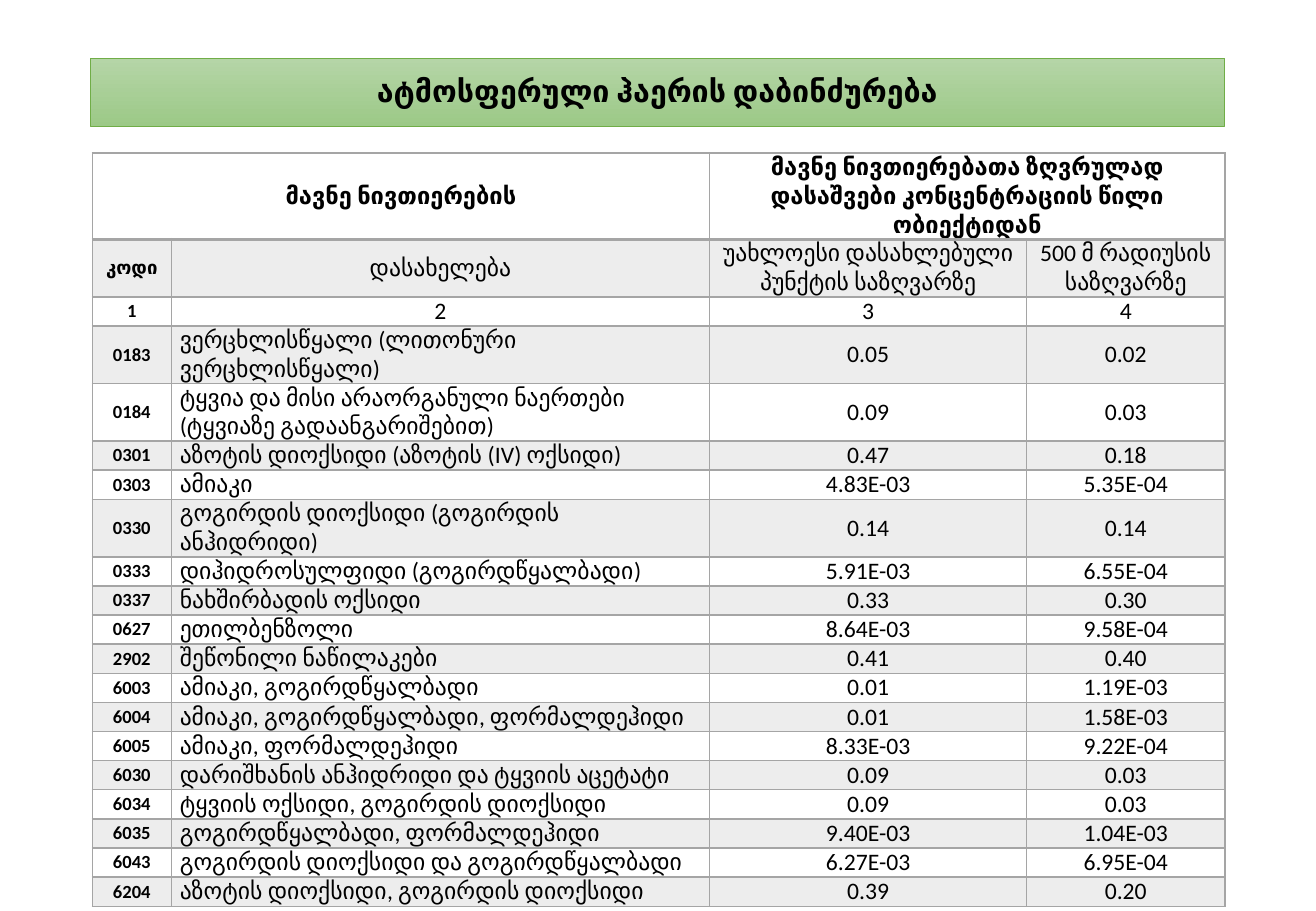
from lxml import etree
from pptx import Presentation
from pptx.dml.color import RGBColor
from pptx.enum.text import MSO_ANCHOR, PP_ALIGN
from pptx.oxml.ns import qn
from pptx.util import Inches, Pt

MIDDLE = MSO_ANCHOR.MIDDLE
CENTER, LEFT = PP_ALIGN.CENTER, PP_ALIGN.LEFT
TITLE_ONLY = 5

COLORS = {
    "text": "000000",
    "title_top": "B5D5A7",
    "title_bottom": "9CC987",
    "title_line": "70AD47",
    "grid": "A5A5A5",
    "band": "EDEDED",
    "plain": "FFFFFF",
}

COLUMN_WIDTHS = [0.65, 4.43, 2.61, 1.63]
HEADER_HEIGHT, DOUBLE_HEIGHT, SINGLE_HEIGHT = 0.7, 0.47, 0.24
DOUBLE_ROWS = {1, 3, 4, 7}
FIRST_DATA_ROW = 3

ROWS = [
    ("მავნე ნივთიერების", "",
     "მავნე ნივთიერებათა ზღვრულად დასაშვები კონცენტრაციის წილი ობიექტიდან", ""),
    ("კოდი", "დასახელება", "უახლოესი დასახლებული პუნქტის საზღვარზე",
     "500 მ რადიუსის საზღვარზე"),
    ("1", "2", "3", "4"),
    ("0183", "ვერცხლისწყალი (ლითონური ვერცხლისწყალი)", "0.05", "0.02"),
    ("0184", "ტყვია და მისი არაორგანული ნაერთები (ტყვიაზე გადაანგარიშებით)",
     "0.09", "0.03"),
    ("0301", "აზოტის დიოქსიდი (აზოტის (IV) ოქსიდი)", "0.47", "0.18"),
    ("0303", "ამიაკი", "4.83E-03", "5.35E-04"),
    ("0330", "გოგირდის დიოქსიდი (გოგირდის ანჰიდრიდი)", "0.14", "0.14"),
    ("0333", "დიჰიდროსულფიდი (გოგირდწყალბადი)", "5.91E-03", "6.55E-04"),
    ("0337", "ნახშირბადის ოქსიდი", "0.33", "0.30"),
    ("0627", "ეთილბენზოლი", "8.64E-03", "9.58E-04"),
    ("2902", "შეწონილი ნაწილაკები", "0.41", "0.40"),
    ("6003", "ამიაკი, გოგირდწყალბადი", "0.01", "1.19E-03"),
    ("6004", "ამიაკი, გოგირდწყალბადი, ფორმალდეჰიდი", "0.01", "1.58E-03"),
    ("6005", "ამიაკი, ფორმალდეჰიდი", "8.33E-03", "9.22E-04"),
    ("6030", "დარიშხანის ანჰიდრიდი და ტყვიის აცეტატი", "0.09", "0.03"),
    ("6034", "ტყვიის ოქსიდი, გოგირდის დიოქსიდი", "0.09", "0.03"),
    ("6035", "გოგირდწყალბადი, ფორმალდეჰიდი", "9.40E-03", "1.04E-03"),
    ("6043", "გოგირდის დიოქსიდი და გოგირდწყალბადი", "6.27E-03", "6.95E-04"),
    ("6204", "აზოტის დიოქსიდი, გოგირდის დიოქსიდი", "0.39", "0.20"),
]


def rgb(name):
    return RGBColor.from_string(COLORS[name])


class SlideBuilder:
    def __init__(self, slide, font_name="Calibri"):
        self.slide = slide
        self.font_name = font_name

    def format_paragraph(self, paragraph, size, bold, alignment):
        paragraph.alignment = alignment
        font = paragraph.font
        font.name, font.size, font.bold = self.font_name, Pt(size), bold
        font.color.rgb = rgb("text")

    def title(self, text, left, top, width, height):
        shape = self.slide.shapes.title
        shape.left, shape.top = Inches(left), Inches(top)
        shape.width, shape.height = Inches(width), Inches(height)
        shape.fill.gradient()
        shape.fill.gradient_angle = 270
        for stop, name in zip(shape.fill.gradient_stops, ("title_top", "title_bottom")):
            stop.color.rgb = rgb(name)
        shape.line.color.rgb = rgb("title_line")
        shape.line.width = Pt(0.5)
        frame = shape.text_frame
        frame.text = text
        frame.vertical_anchor = MIDDLE
        paragraph = frame.paragraphs[0]
        paragraph.line_spacing = 0.9
        self.format_paragraph(paragraph, 18, True, CENTER)

    def borders(self, cell, bottom_width):
        properties = cell._tc.get_or_add_tcPr()
        for side, width in (("L", 1), ("R", 1), ("T", 1), ("B", bottom_width)):
            line = etree.SubElement(properties, qn(f"a:ln{side}"), w=str(Pt(width)))
            fill = etree.SubElement(line, qn("a:solidFill"))
            etree.SubElement(fill, qn("a:srgbClr"), val=COLORS["grid"])

    def cell(self, cell, text, row, column):
        self.borders(cell, 2 if row == 0 else 1)
        cell.fill.solid()
        cell.fill.fore_color.rgb = rgb("band" if row % 2 else "plain")
        cell.margin_left = cell.margin_right = Inches(0.07)
        cell.margin_top = cell.margin_bottom = 0
        cell.vertical_anchor = MIDDLE
        cell.text = text
        is_code = column == 0 and row > 0
        is_name = column == 1 and row >= FIRST_DATA_ROW
        self.format_paragraph(cell.text_frame.paragraphs[0], 11 if is_code else 14,
                              is_code or row == 0, LEFT if is_name else CENTER)

    def table(self, rows, left, top):
        heights = [HEADER_HEIGHT] + [
            DOUBLE_HEIGHT if row in DOUBLE_ROWS else SINGLE_HEIGHT
            for row in range(1, len(rows))]
        table = self.slide.shapes.add_table(
            len(rows), len(COLUMN_WIDTHS), Inches(left), Inches(top),
            Inches(sum(COLUMN_WIDTHS)), Inches(sum(heights))).table
        table.horz_banding = table.first_row = False
        for column, width in zip(table.columns, COLUMN_WIDTHS):
            column.width = Inches(width)
        for row, height in zip(table.rows, heights):
            row.height = Inches(height)
        for row, texts in enumerate(rows):
            for column, text in enumerate(texts):
                self.cell(table.cell(row, column), text, row, column)
        # Header groups span two columns each
        for column in (0, 2):
            table.cell(0, column).merge(table.cell(0, column + 1))


def main():
    presentation = Presentation()
    presentation.slide_width, presentation.slide_height = Inches(10.83), Inches(7.5)
    slide = presentation.slides.add_slide(presentation.slide_layouts[TITLE_ONLY])
    builder = SlideBuilder(slide)

    # Heading banner
    builder.title("ატმოსფერული ჰაერის დაბინძურება", 0.74, 0.48, 9.34, 0.56)

    # Concentrations of harmful substances
    builder.table(ROWS, 0.76, 1.26)

    presentation.save("out.pptx")


if __name__ == "__main__":
    main()
